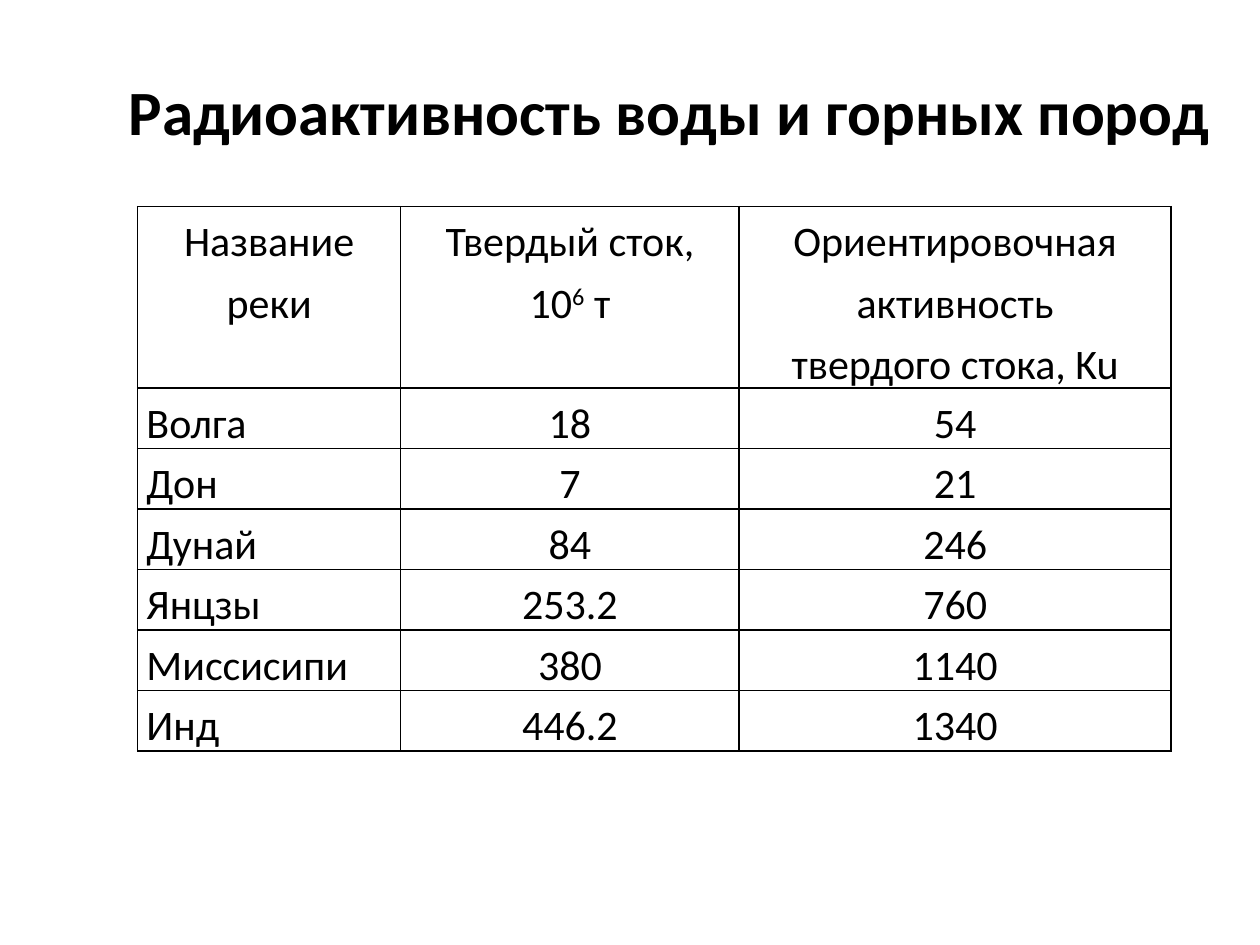
from dataclasses import dataclass

from lxml.etree import SubElement
from pptx import Presentation
from pptx.dml.color import RGBColor
from pptx.enum.text import MSO_ANCHOR, MSO_AUTO_SIZE, PP_ALIGN
from pptx.oxml import parse_xml
from pptx.oxml.ns import nsdecls, qn
from pptx.util import Pt

FONT = "Calibri"
BLACK = "000000"
SUPERSCRIPT = "30000"


@dataclass(frozen=True)
class TextRun:
    text: str
    raised: bool = False


@dataclass(frozen=True)
class River:
    name: str
    solid_runoff: str
    activity: str


# Each header is a list of paragraphs, each paragraph a list of runs
HEADERS = [
    [[TextRun("Название")], [TextRun("реки")]],
    [[TextRun("Твердый сток,")],
     [TextRun("10"), TextRun("6", raised=True), TextRun(" т")]],
    [[TextRun("Ориентировочная активность")], [TextRun("твердого стока, Ku")]],
]
RIVERS = [
    River("Волга", "18", "54"),
    River("Дон", "7", "21"),
    River("Дунай", "84", "246"),
    River("Янцзы", "253.2", "760"),
    River("Миссисипи", "380", "1140"),
    River("Инд", "446.2", "1340"),
]
COLUMN_WIDTHS = [150.3, 193.4, 246.9]
HEADER_HEIGHT, ROW_HEIGHT = 103.4, 34.5


def color(hex_value: str) -> RGBColor:
    return RGBColor.from_string(hex_value)


def add_run(paragraph, text_run: TextRun, size: float, bold: bool = False) -> None:
    run = paragraph.add_run()
    run.text = text_run.text
    run.font.name = FONT
    run.font.size = Pt(size)
    run.font.bold = bold
    run.font.color.rgb = color(BLACK)
    if text_run.raised:
        run._r.get_or_add_rPr().set("baseline", SUPERSCRIPT)


def add_borders(cell) -> None:
    properties = cell._tc.get_or_add_tcPr()
    for position, side in enumerate(("lnL", "lnR", "lnT", "lnB")):
        line = parse_xml(f'<a:{side} {nsdecls("a")} w="{Pt(1)}"/>')
        fill = SubElement(line, qn("a:solidFill"))
        SubElement(fill, qn("a:srgbClr"), val=BLACK)
        properties.insert(position, line)


def fill_cell(cell, paragraphs: list[list[TextRun]], alignment: PP_ALIGN,
              anchor: MSO_ANCHOR) -> None:
    cell.fill.background()
    cell.vertical_anchor = anchor
    cell.margin_left = cell.margin_right = Pt(5)
    cell.margin_top = cell.margin_bottom = Pt(0)
    add_borders(cell)
    for index, runs in enumerate(paragraphs):
        frame = cell.text_frame
        paragraph = frame.add_paragraph() if index else frame.paragraphs[0]
        paragraph.alignment = alignment
        paragraph.line_spacing = 1.2
        for text_run in runs:
            add_run(paragraph, text_run, 24)


def add_title(slide, text: str) -> None:
    title = slide.shapes.add_textbox(Pt(31), Pt(37.5), Pt(720), Pt(51))
    frame = title.text_frame
    frame.word_wrap = True
    frame.auto_size = MSO_AUTO_SIZE.SHAPE_TO_FIT_TEXT
    frame.vertical_anchor = MSO_ANCHOR.MIDDLE
    paragraph = frame.paragraphs[0]
    paragraph.alignment = PP_ALIGN.JUSTIFY
    paragraph._p.get_or_add_pPr().set("indent", str(Pt(35.4)))
    add_run(paragraph, TextRun(text), 36, bold=True)


def add_river_table(slide) -> None:
    height = HEADER_HEIGHT + ROW_HEIGHT * len(RIVERS)
    table = slide.shapes.add_table(
        len(RIVERS) + 1, len(COLUMN_WIDTHS),
        Pt(78.7), Pt(118), Pt(sum(COLUMN_WIDTHS)), Pt(height)).table
    table.first_row = table.horz_banding = False
    for column, width in zip(table.columns, COLUMN_WIDTHS):
        column.width = Pt(width)
    for index, row in enumerate(table.rows):
        row.height = Pt(ROW_HEIGHT if index else HEADER_HEIGHT)

    # Header row
    for column, paragraphs in enumerate(HEADERS):
        fill_cell(table.cell(0, column), paragraphs, PP_ALIGN.CENTER, MSO_ANCHOR.TOP)

    # One row per river: name to the left, figures centred
    for row, river in enumerate(RIVERS, start=1):
        values = (river.name, river.solid_runoff, river.activity)
        for column, value in enumerate(values):
            alignment = PP_ALIGN.CENTER if column else PP_ALIGN.LEFT
            fill_cell(table.cell(row, column), [[TextRun(value)]],
                      alignment, MSO_ANCHOR.MIDDLE)


def main() -> None:
    presentation = Presentation()
    presentation.slide_width, presentation.slide_height = Pt(720), Pt(540)
    slide = presentation.slides.add_slide(presentation.slide_layouts[6])
    add_title(slide, "Радиоактивность воды и горных пород")
    add_river_table(slide)
    presentation.save("out.pptx")


if __name__ == "__main__":
    main()
